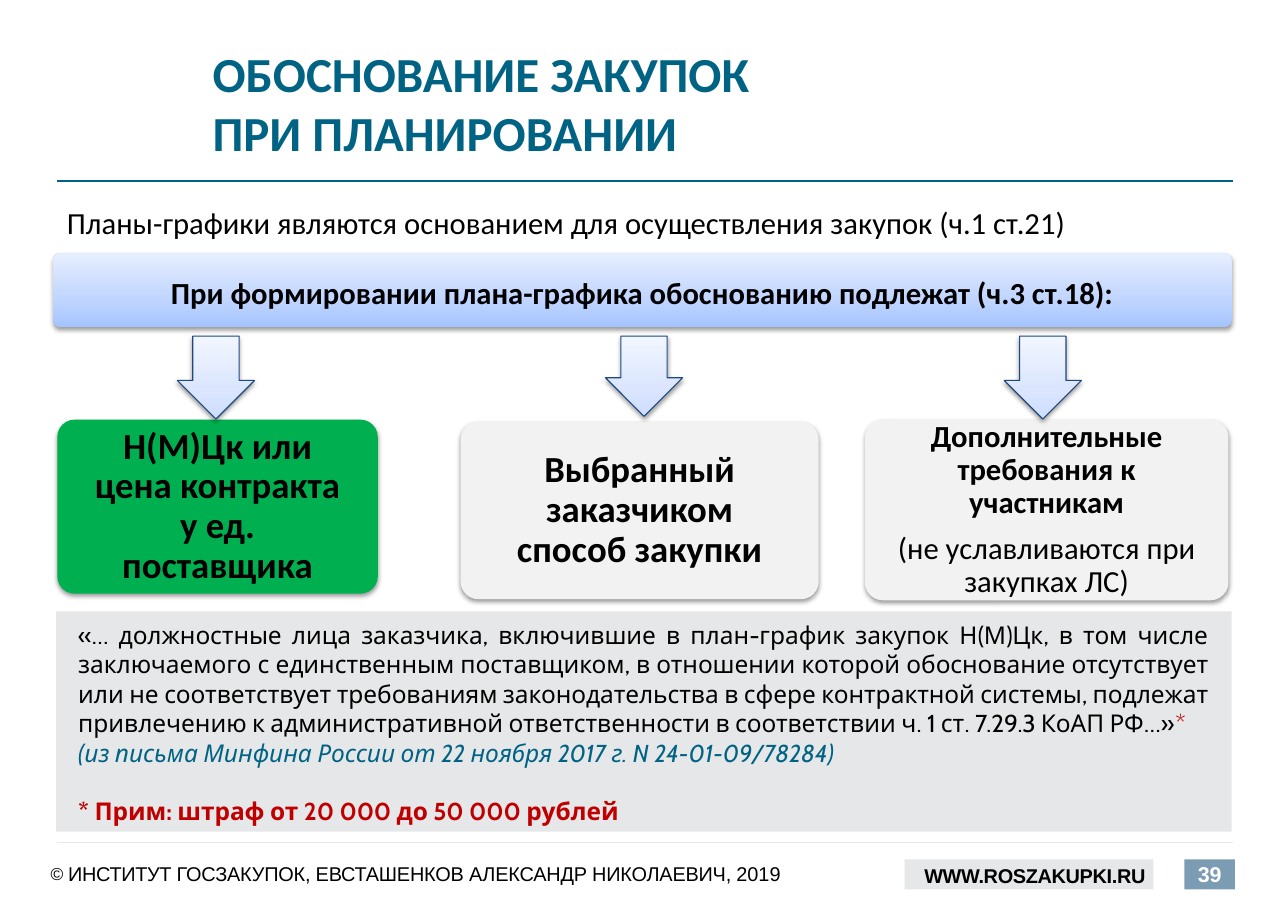
from copy import deepcopy

from lxml.etree import SubElement
from pptx import Presentation
from pptx.dml.color import RGBColor
from pptx.enum.shapes import MSO_CONNECTOR as Connector, MSO_SHAPE as Shape
from pptx.enum.text import MSO_ANCHOR as Anchor, PP_ALIGN as Align
from pptx.oxml.ns import qn
from pptx.util import Inches, Pt

WIDTH, HEIGHT = Inches(11.69), Inches(8.27)
TEAL, RED, BLACK, WHITE = "006384", "C00000", "000000", "FFFFFF"
PALE, GREEN, PANEL, SLATE, NAVY = "F2F2F2", "00B050", "E6E7E8", "7C9CB4", "1F497D"
BANNER_STOPS = ((0, "A4C4FF"), (0.35, "BFD4FF"), (1, "E6EEFF"))
ARROW_STOPS = ((0, "CDDDFF"), (0.35, "DBE6FE"), (1, "F1F5FF"))


def colour(value):
    return RGBColor.from_string(value)


def across(percent):
    return round(WIDTH * percent / 100)


def down(percent):
    return round(HEIGHT * percent / 100)


def place(left, top, width, height):
    """Turn percentages of the slide into lengths."""
    return across(left), down(top), across(width), down(height)


def set_frame(shape, insets=(0, 0, 0, 0), anchor=Anchor.MIDDLE):
    """Set wrapping, anchor and the left, top, right and bottom insets in inches."""
    frame = shape.text_frame
    frame.word_wrap = True
    frame.vertical_anchor = anchor
    (frame.margin_left, frame.margin_top,
     frame.margin_right, frame.margin_bottom) = map(Inches, insets)
    return frame


def add_text(slide, area, insets=(0, 0, 0, 0), anchor=Anchor.MIDDLE):
    return set_frame(slide.shapes.add_textbox(*place(*area)), insets, anchor)


def add_paragraph(frame, align=Align.LEFT, spacing=None, before=None, after=None):
    first = frame.paragraphs[0]
    paragraph = frame.add_paragraph() if first.runs else first
    paragraph.alignment = align
    paragraph.line_spacing = spacing
    paragraph.space_before = before
    paragraph.space_after = after
    return paragraph


def add_run(paragraph, text, size, ink=BLACK, name="Calibri",
            bold=False, italic=False, tracking=0, baseline=0):
    """Tracking is in hundredths of a point, baseline in thousandths of a percent."""
    run = paragraph.add_run()
    run.text = text
    font = run.font
    font.size, font.name, font.bold, font.italic = Pt(size), name, bold, italic
    font.color.rgb = colour(ink)
    properties = run._r.get_or_add_rPr()
    if tracking:
        properties.set("spc", str(tracking))
    if baseline:
        properties.set("baseline", str(baseline))


def add_shape(slide, kind, area, fill=None, adjustments=()):
    shape = slide.shapes.add_shape(kind, *place(*area))
    for index, value in enumerate(adjustments):
        shape.adjustments[index] = value
    shape.shadow.inherit = False
    shape.line.fill.background()
    if fill:
        shape.fill.solid()
        shape.fill.fore_color.rgb = colour(fill)
    return shape


def add_shadow(shape):
    effects = shape._element.spPr.find(qn("a:effectLst"))
    shadow = SubElement(effects, qn("a:outerShdw"), blurRad="40000", dist="20000",
                        dir="5400000", rotWithShape="0")
    black = SubElement(shadow, qn("a:srgbClr"), val=BLACK)
    SubElement(black, qn("a:alpha"), val="38000")


def fill_gradient(shape, stops):
    """Fill upwards through three colour stops."""
    shape.fill.gradient()
    shape.fill.gradient_angle = 90
    stop_list = next(shape._element.spPr.iter(qn("a:gsLst")))
    stop_list.append(deepcopy(stop_list[-1]))
    for stop, (position, value) in zip(shape.fill.gradient_stops, stops):
        stop.position = position
        stop.color.rgb = colour(value)


def add_rule(slide, top, ink, weight):
    rule = slide.shapes.add_connector(Connector.STRAIGHT, across(4.45), down(top),
                                      across(95.72), down(top))
    rule.line.color.rgb = colour(ink)
    rule.line.width = Pt(weight)
    SubElement(rule._element.spPr, qn("a:effectLst"))


def add_arrow(slide, left, height):
    arrow = add_shape(slide, Shape.DOWN_ARROW, (left, 36.9, 5.99, height),
                      adjustments=(0.6, 0.5))
    fill_gradient(arrow, ARROW_STOPS)
    arrow.line.color.rgb = colour(NAVY)
    arrow.line.width = Pt(0.75)
    add_shadow(arrow)


def add_card(slide, area, fill, inset, size, heading, remark=None):
    card = add_shape(slide, Shape.ROUNDED_RECTANGLE, area, fill, (0.1,))
    add_shadow(card)
    frame = set_frame(card, (inset, 0.1, inset, 0.1))
    add_run(add_paragraph(frame, Align.CENTER, 0.9), heading, size, bold=True)
    if remark:
        add_run(add_paragraph(frame, Align.CENTER, 0.9, before=Pt(8)), remark, size)


def add_header(slide):
    paragraph = add_paragraph(add_text(slide, (16.51, 4.72, 79.47, 13.06)))
    add_run(paragraph, "ОБОСНОВАНИЕ ЗАКУПОК", 32, TEAL, bold=True)
    paragraph.add_line_break()
    add_run(paragraph, "ПРИ ПЛАНИРОВАНИИ", 32, TEAL, bold=True)
    add_rule(slide, 19.83, TEAL, 1.42)

    lead = add_text(slide, (4.36, 21.77, 91.27, 6.05), (0.1, 0.05, 0.1, 0.05), Anchor.TOP)
    add_run(add_paragraph(lead),
            "Планы-графики являются основанием для осуществления закупок (ч.1 ст.21)", 20)


def add_banner(slide):
    banner = add_shape(slide, Shape.ROUNDED_RECTANGLE, (4.11, 27.81, 91.53, 8.1),
                       adjustments=(0.1,))
    fill_gradient(banner, BANNER_STOPS)
    add_shadow(banner)
    frame = set_frame(banner, (0.12, 0.08, 0.12, 0))
    add_run(add_paragraph(frame, Align.CENTER, 0.9),
            "При формировании плана-графика обоснованию подлежат (ч.3 ст.18):",
            20, bold=True)


def add_notice(slide):
    panel = add_shape(slide, Shape.RECTANGLE, (4.36, 67.11, 91.27, 24.18), PANEL)
    frame = set_frame(panel, (0.2, 0.08, 0.2, 0), Anchor.TOP)
    quote = add_paragraph(frame, Align.JUSTIFY)
    add_run(quote, "«… должностные лица заказчика, включившие в план-график закупок "
            "Н(М)Цк, в том числе заключаемого с единственным поставщиком, в отношении "
            "которой обоснование отсутствует или не соответствует требованиям "
            "законодательства в сфере контрактной системы, подлежат привлечению к "
            "административной ответственности в соответствии ч. 1 ст. 7.29.3 КоАП РФ…»",
            16, name="Cabin")
    add_run(quote, "*", 16, RED, "Cabin")
    add_run(add_paragraph(frame),
            "(из письма Минфина России от 22 ноября 2017 г. N 24-01-09/78284)",
            16, TEAL, "Cabin", italic=True)
    add_run(add_paragraph(frame, before=Pt(19.2)),
            "* Прим: штраф от 20 000 до 50 000 рублей", 16, RED, "Cabin", bold=True)


def add_footer(slide):
    add_rule(slide, 92.5, PANEL, 0.85)
    site = add_shape(slide, Shape.RECTANGLE, (70.23, 94.32, 19.33, 3.3), PANEL)
    add_run(add_paragraph(set_frame(site, (0.18, 0.02, 0, 0))), "WWW.ROSZAKUPKI.RU",
            13, name="Arial", bold=True, tracking=-20)
    number = add_shape(slide, Shape.RECTANGLE, (91.96, 94.32, 3.93, 3.3), SLATE)
    add_run(add_paragraph(set_frame(number), Align.CENTER), "39",
            14, WHITE, "Arial", bold=True, tracking=-20)

    owner = add_paragraph(add_text(slide, (3.85, 93.71, 58.43, 4.96), (0.01, 0.1, 0, 0.1)),
                          spacing=Pt(14.8))
    add_run(owner, "© ", 19.5, name="Arial", baseline=4000)
    add_run(owner, "ИНСТИТУТ ", 13, name="Arial", tracking=-20)
    add_run(owner, "ГОСЗАКУПОК, ЕВСТАШЕНКОВ АЛЕКСАНДР НИКОЛАЕВИЧ, ", 13,
            name="Arial", tracking=-10)
    add_run(owner, "2019", 13, name="Arial")


def main():
    presentation = Presentation()
    presentation.slide_width, presentation.slide_height = WIDTH, HEIGHT
    slide = presentation.slides.add_slide(presentation.slide_layouts[6])

    add_header(slide)
    add_banner(slide)
    add_card(slide, (4.45, 46.07, 24.89, 19.11), GREEN, 0.18, 24,
             "Н(М)Цк или цена контракта у ед. поставщика")
    add_card(slide, (35.76, 46.31, 27.8, 19.47), PALE, 0.26, 24,
             "Выбранный заказчиком способ закупки")
    add_card(slide, (67.15, 46.07, 28.23, 19.83), PALE, 0.17, 20,
             "Дополнительные требования к участникам",
             "(не уславливаются при закупках ЛС)")
    for left, height in ((13.77, 9.1), (47.01, 8.8), (77.97, 9.1)):
        add_arrow(slide, left, height)
    add_notice(slide)
    add_footer(slide)
    presentation.save("out.pptx")


if __name__ == "__main__":
    main()
